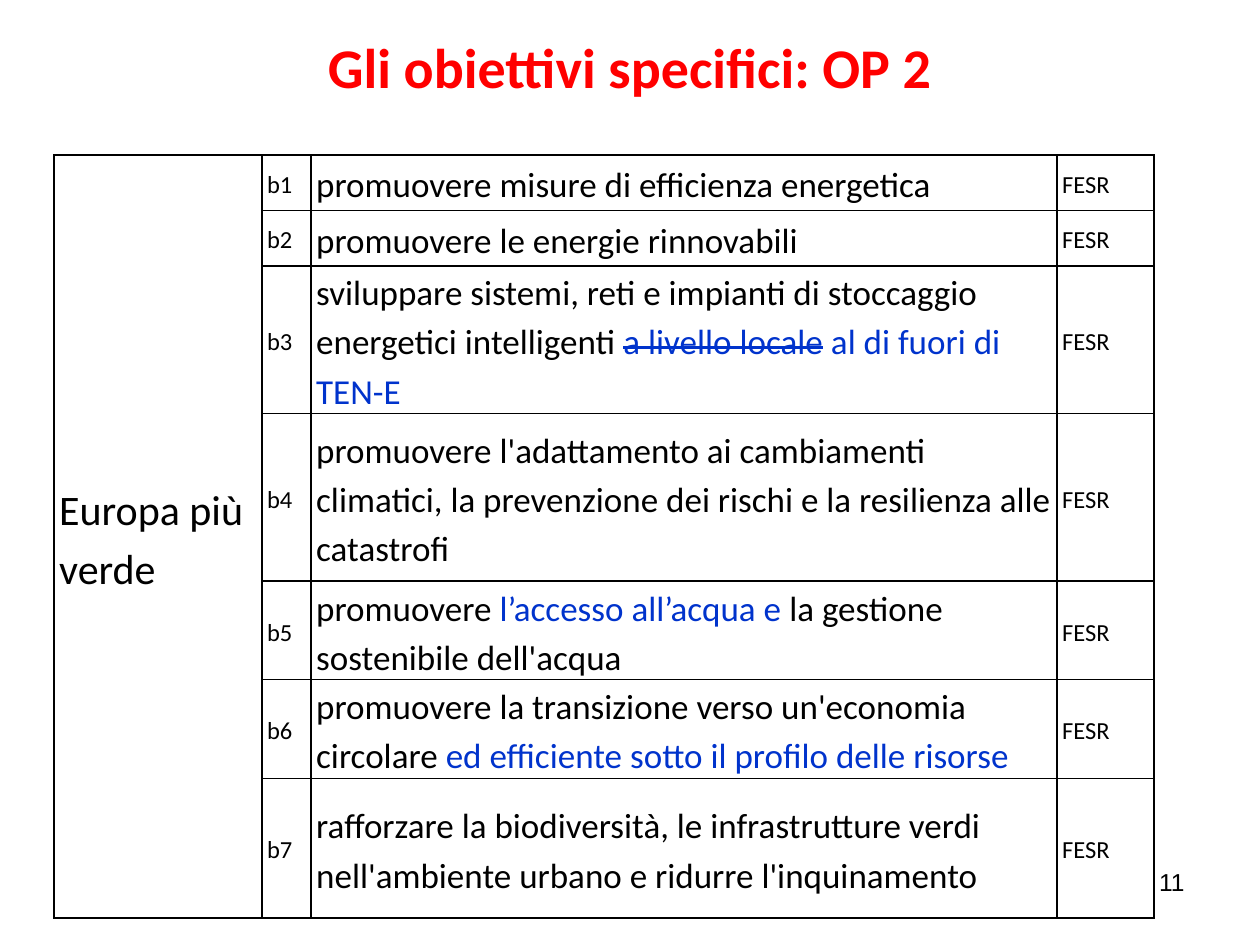
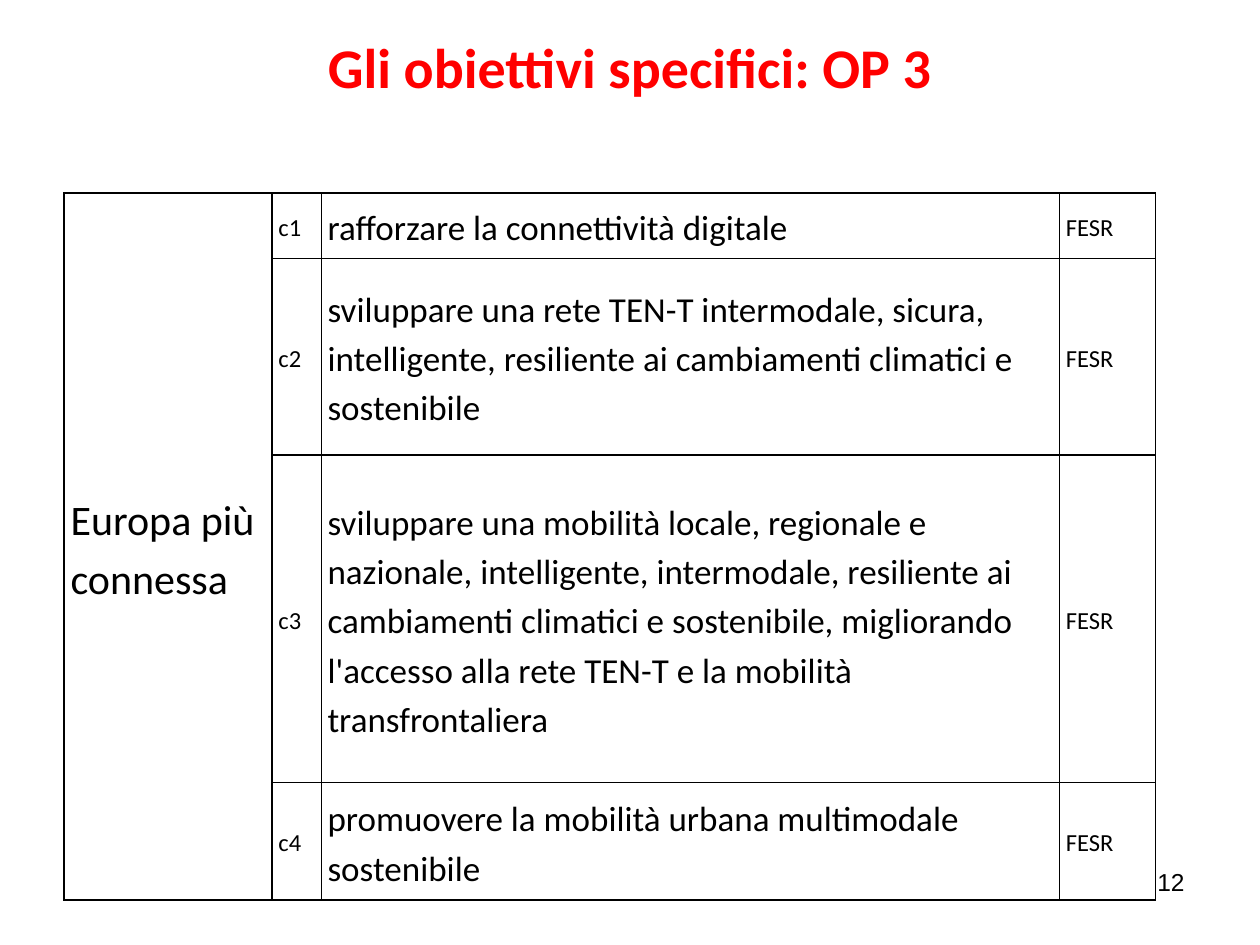
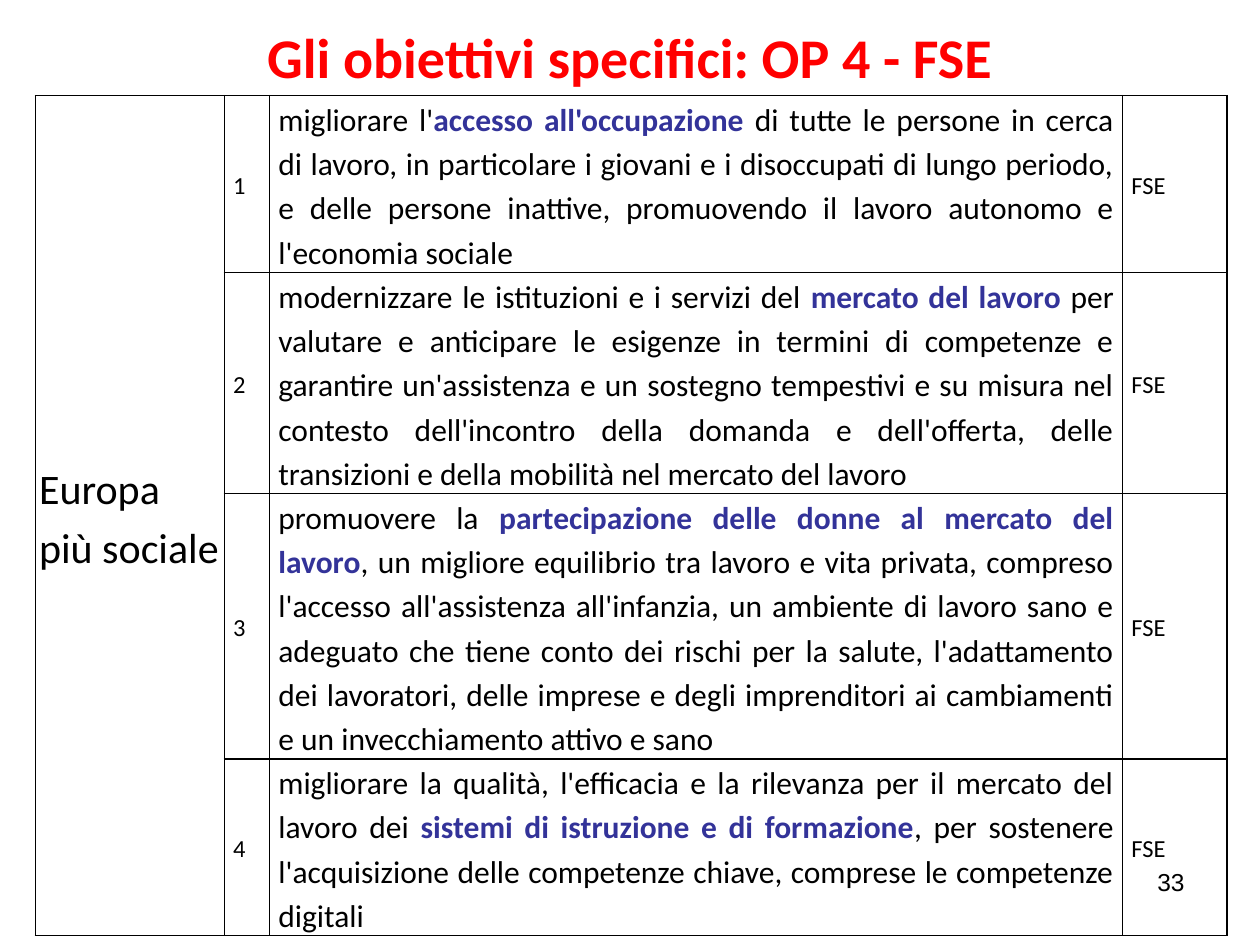
from lxml.etree import SubElement
from pptx import Presentation
from pptx.dml.color import RGBColor
from pptx.enum.text import MSO_ANCHOR, MSO_AUTO_SIZE, PP_ALIGN
from pptx.oxml.ns import qn
from pptx.util import Inches, Pt

RED = RGBColor(0xFF, 0x00, 0x00)
BLACK = RGBColor(0x00, 0x00, 0x00)
BLUE = RGBColor(0x00, 0x33, 0xCC)
INDIGO = RGBColor(0x33, 0x33, 0x99)

NEW = {"color": BLUE}
STRUCK = {"color": BLUE, "strike": True}
KEY = {"color": INDIGO, "bold": True}

OP2 = [
    ("b1", ["promuovere misure di efficienza energetica"]),
    ("b2", ["promuovere le energie rinnovabili"]),
    ("b3", ["sviluppare sistemi, reti e impianti di stoccaggio energetici intelligenti ",
            ("a livello locale", STRUCK), (" al di fuori di TEN-E", NEW)]),
    ("b4", ["promuovere l'adattamento ai cambiamenti climatici, la prevenzione dei rischi "
            "e la resilienza alle catastrofi"]),
    ("b5", ["promuovere ", ("l’accesso all’acqua e", NEW),
            " la gestione sostenibile dell'acqua"]),
    ("b6", ["promuovere la transizione verso un'economia circolare ",
            ("ed efficiente sotto il profilo delle risorse", NEW)]),
    ("b7", ["rafforzare la biodiversità, le infrastrutture verdi nell'ambiente urbano "
            "e ridurre l'inquinamento"]),
]
OP3 = [
    ("c1", ["rafforzare la connettività digitale"]),
    ("c2", ["sviluppare una rete TEN-T intermodale, sicura, intelligente, resiliente ai "
            "cambiamenti climatici e sostenibile"]),
    ("c3", ["sviluppare una mobilità locale, regionale e nazionale, intelligente, "
            "intermodale, resiliente ai cambiamenti climatici e sostenibile, migliorando "
            "l'accesso alla rete TEN-T e la mobilità transfrontaliera"]),
    ("c4", ["promuovere la mobilità urbana multimodale sostenibile"]),
]
OP4 = [
    ("1", ["migliorare l'", ("accesso all'occupazione ", KEY),
           "di tutte le persone in cerca di lavoro, in particolare i giovani e i "
           "disoccupati di lungo periodo, e delle persone inattive, promuovendo il "
           "lavoro autonomo e l'economia sociale"]),
    ("2", ["modernizzare le istituzioni e i servizi del ", ("mercato del lavoro ", KEY),
           "per valutare e anticipare le esigenze in termini di competenze e garantire "
           "un'assistenza e un sostegno tempestivi e su misura nel contesto "
           "dell'incontro della domanda e dell'offerta, delle transizioni e della "
           "mobilità nel mercato del lavoro"]),
    ("3", ["promuovere la ", ("partecipazione delle donne al mercato del lavoro", KEY),
           ", un migliore equilibrio tra lavoro e vita privata, compreso l'accesso "
           "all'assistenza all'infanzia, un ambiente di lavoro sano e adeguato che tiene "
           "conto dei rischi per la salute, l'adattamento dei lavoratori, delle imprese "
           "e degli imprenditori ai cambiamenti e un invecchiamento attivo e sano"]),
    ("4", ["migliorare la qualità, l'efficacia e la rilevanza per il mercato del lavoro dei ",
           ("sistemi di istruzione e di formazione", KEY),
           ", per sostenere l'acquisizione delle competenze chiave, comprese le "
           "competenze digitali"]),
]


def write(tf, runs, size, font="Calibri", color=BLACK, bold=False, align=PP_ALIGN.LEFT,
          spacing=None):
    p = tf.paragraphs[0]
    p.alignment = align
    p.line_spacing = spacing
    for part in runs:
        text, mark = (part, {}) if isinstance(part, str) else part
        r = p.add_run()
        r.text = text
        r.font.name = font
        r.font.size = Pt(size)
        r.font.bold = mark.get("bold", bold)
        r.font.color.rgb = mark.get("color", color)
        if mark.get("strike"):
            r.font._element.set("strike", "sngStrike")


def add_title(s, text, height):
    sp = s.shapes.title
    sp.left, sp.top, sp.width, sp.height = map(Inches, (0.5, 0.13, 9, height))
    tf = sp.text_frame
    tf.auto_size = MSO_AUTO_SIZE.NONE
    tf.vertical_anchor = MSO_ANCHOR.MIDDLE
    write(tf, [text], 32, color=RED, bold=True, align=PP_ALIGN.CENTER)


def add_page_number(s, number):
    sp = s.shapes.add_textbox(Inches(7.17), Inches(6.83), Inches(2.33), Inches(0.52))
    sp.text_frame.word_wrap = True
    write(sp.text_frame, [str(number)], 14, font="Arial", align=PP_ALIGN.RIGHT)


def format_cell(cell, inset):
    cell.margin_left = cell.margin_right = Inches(inset)
    cell.margin_top = cell.margin_bottom = 0
    cell.vertical_anchor = MSO_ANCHOR.MIDDLE
    tc_pr = cell._tc.get_or_add_tcPr()
    for side in ("a:lnL", "a:lnR", "a:lnT", "a:lnB"):
        ln = SubElement(tc_pr, qn(side), w=str(Pt(1)))
        fill = SubElement(ln, qn("a:solidFill"))
        SubElement(fill, qn("a:srgbClr"), val=str(BLACK))
    cell.fill.background()


def add_objectives(s, left, top, cols, rows, goal, fund, items, insets, size=20,
                   align=PP_ALIGN.LEFT):
    table = s.shapes.add_table(len(rows), len(cols), Inches(left), Inches(top),
                               Inches(sum(cols)), Inches(sum(rows))).table
    table.first_row = table.horz_banding = False
    for column, width in zip(table.columns, cols):
        column.width = Inches(width)
    for row, height in zip(table.rows, rows):
        row.height = Inches(height)
        for i, cell in enumerate(row.cells):
            format_cell(cell, insets[min(i, 1)])
    table.cell(0, 0).merge(table.cell(len(rows) - 1, 0))
    write(table.cell(0, 0).text_frame, [goal], 24, spacing=1.15)
    for i, (code, runs) in enumerate(items):
        write(table.cell(i, 1).text_frame, [code], 14, spacing=1.15)
        write(table.cell(i, 2).text_frame, runs, size, align=align, spacing=1.15)
        write(table.cell(i, 3).text_frame, [fund], 14, spacing=1.15)


def add_objectives_slide(prs, title, number, title_height=0.79, **table):
    s = prs.slides.add_slide(prs.slide_layouts[5])
    add_title(s, title, title_height)
    add_objectives(s, **table)
    add_page_number(s, number)


def main():
    prs = Presentation()
    prs.slide_width, prs.slide_height = Inches(10), Inches(7.5)
    add_objectives_slide(
        prs, "Gli obiettivi specifici: OP 2", 11, left=0.43, top=1.23,
        cols=[1.65, 0.39, 5.92, 0.77], rows=[0.44, 0.44, 1.17, 1.33, 0.78, 0.78, 1.11],
        goal="Europa più verde", fund="FESR", items=OP2, insets=(0.04, 0.04))
    add_objectives_slide(
        prs, "Gli obiettivi specifici: OP 3", 12, left=0.51, top=1.53,
        cols=[1.65, 0.39, 5.86, 0.76], rows=[0.52, 1.56, 2.6, 0.93],
        goal="Europa più connessa", fund="FESR", items=OP3, insets=(0.05, 0.05))
    add_objectives_slide(
        prs, "Gli obiettivi specifici: OP 4 - FSE", 33, title_height=0.63,
        left=0.28, top=0.76, cols=[1.5, 0.36, 6.77, 0.83], rows=[1.4, 1.75, 2.1, 1.4],
        goal="Europa più sociale", fund="FSE", items=OP4, insets=(0.03, 0.07),
        size=18, align=PP_ALIGN.JUSTIFY)
    prs.save("out.pptx")


if __name__ == "__main__":
    main()
